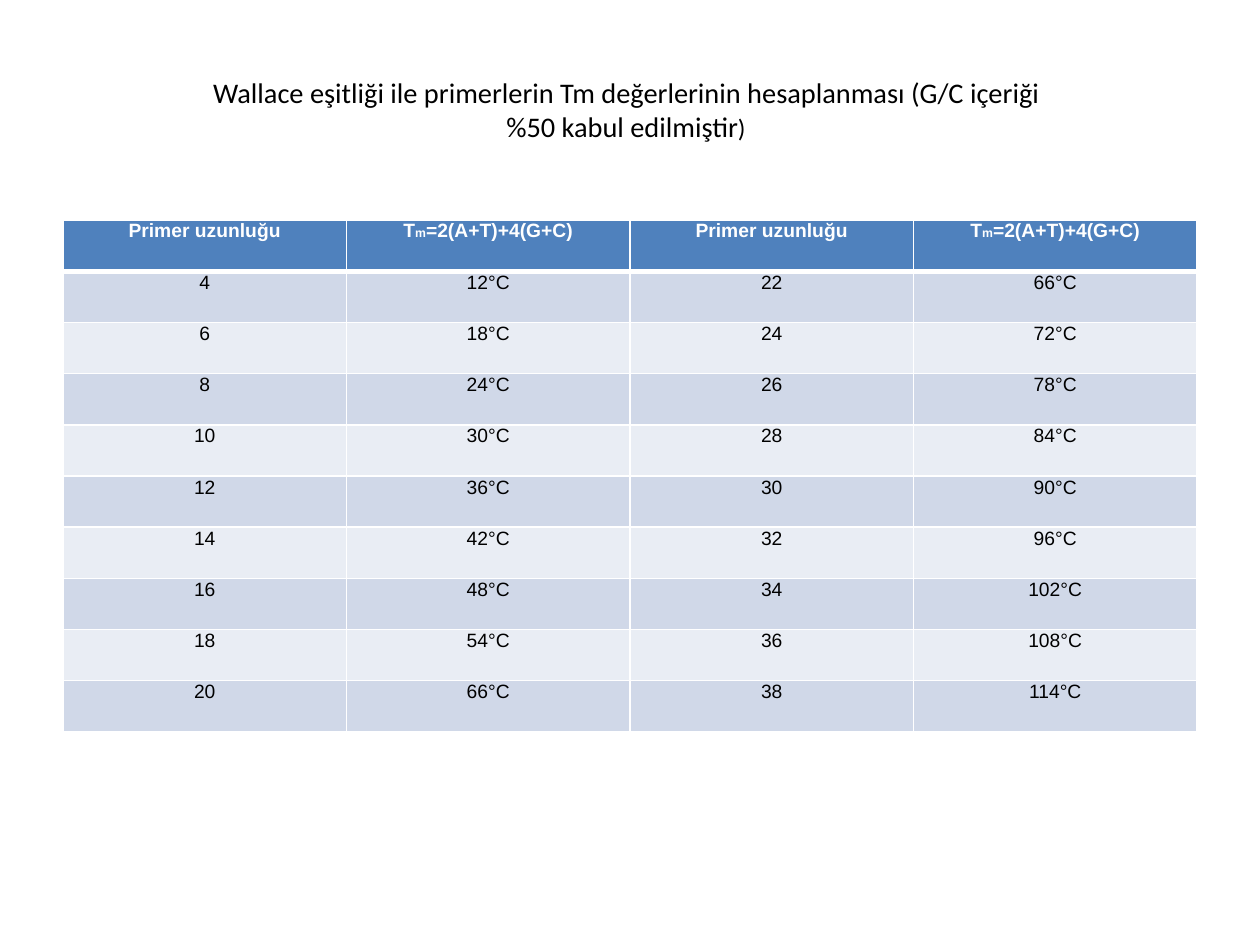
from dataclasses import dataclass
from lxml.etree import SubElement
from pptx import Presentation
from pptx.dml.color import RGBColor as Rgb
from pptx.enum.text import MSO_ANCHOR as Anchor, PP_ALIGN as Align
from pptx.oxml.ns import qn
from pptx.util import Emu, Pt

SCALE = 914400 / 126


@dataclass(frozen=True)
class Theme:
    black: str = "000000"
    white: str = "FFFFFF"
    header: str = "4F81BD"
    bands: tuple = ("D0D8E8", "E9EDF4")
    title_font: str = "Calibri"
    table_font: str = "Arial"
    title_size: float = 16.2
    bracket_size: float = 14.4
    table_size: float = 11
    subscript_size: float = 7
    line_spacing: float = 12.6
    thin: int = 1
    thick: int = 3


THEME = Theme()
TITLE = ("Wallace eşitliği ile primerlerin Tm değerlerinin hesaplanması (G/C içeriği",
         "%50 kabul edilmiştir")
FORMULA = ("T", "m", "=2(A+T)+4(G+C)")
HEADINGS = (("Primer uzunluğu",), FORMULA) * 2
LENGTHS = range(4, 21, 2)
SHORT_TM = (12, 18, 24, 30, 36, 42, 48, 54, 66)
ROWS = [(f"{length}", f"{tm}°C", f"{length + 18}", f"{3 * (length + 18)}°C")
        for length, tm in zip(LENGTHS, SHORT_TM)]


def px(length):
    return Emu(round(length * SCALE))


def apply(target, values):
    for name, value in values.items():
        setattr(target, name, value)


def add_span(para, text, font, size, color, bold=False):
    span = para.add_run()
    span.text = text
    apply(span.font, {"name": font, "size": Pt(size), "bold": bold})
    span.font.color.rgb = Rgb.from_string(color)


def add_title(page, left, top, width, height):
    box = page.shapes.add_textbox(*map(px, (left, top, width, height)))
    frame = box.text_frame
    apply(frame, {"word_wrap": True, "vertical_anchor": Anchor.BOTTOM,
                  "margin_top": 0, "margin_bottom": px(46)})
    para = frame.paragraphs[0]
    para.alignment = Align.CENTER
    style = (THEME.title_font, THEME.title_size, THEME.black)
    add_span(para, TITLE[0], *style)
    para.add_line_break()
    add_span(para, TITLE[1], *style)
    add_span(para, ")", THEME.title_font, THEME.bracket_size, THEME.black)


def set_borders(cell, widths):
    """Draw white cell edges; widths maps an edge tag to points."""
    properties = cell._tc.get_or_add_tcPr()
    for index, (edge, width) in enumerate(widths.items()):
        line = SubElement(properties, qn(f"a:{edge}"), w=str(Pt(width)))
        fill = SubElement(line, qn("a:solidFill"))
        SubElement(fill, qn("a:srgbClr"), val=THEME.white)
        properties.insert(index, line)


def fill_cell(cell, parts, row):
    is_header = row == 0
    apply(cell, {"margin_left": 0, "margin_right": 0, "margin_top": 0,
                 "margin_bottom": 0, "vertical_anchor": Anchor.TOP})
    cell.fill.solid()
    color = THEME.header if is_header else THEME.bands[(row - 1) % 2]
    cell.fill.fore_color.rgb = Rgb.from_string(color)
    set_borders(cell, {"lnL": THEME.thin, "lnR": THEME.thin,
                       "lnT": THEME.thick if row == 1 else THEME.thin,
                       "lnB": THEME.thick if is_header else THEME.thin})
    para = cell.text_frame.paragraphs[0]
    para.alignment = Align.CENTER
    if not is_header:
        para.line_spacing = Pt(THEME.line_spacing)
    for part in parts:
        size = THEME.subscript_size if part == "m" else THEME.table_size
        ink = THEME.white if is_header else THEME.black
        add_span(para, part, THEME.table_font, size, ink, is_header)


def add_primer_table(page, left, top, width, height):
    rows = [HEADINGS] + [[(text,) for text in row] for row in ROWS]
    table = page.shapes.add_table(len(rows), len(HEADINGS),
                                  *map(px, (left, top, width, height))).table
    for column in table.columns:
        column.width = px(width / len(HEADINGS))
    for row, contents in enumerate(rows):
        table.rows[row].height = px(height / len(rows))
        for column, parts in enumerate(contents):
            fill_cell(table.cell(row, column), parts, row)


def main():
    deck = Presentation()
    apply(deck, {"slide_width": px(1260), "slide_height": px(945)})
    page = deck.slides.add_slide(deck.slide_layouts[6])
    add_title(page, 59, 108, 1134, 81)
    add_primer_table(page, 63, 220, 1134, 512)
    deck.save("out.pptx")


if __name__ == "__main__":
    main()
